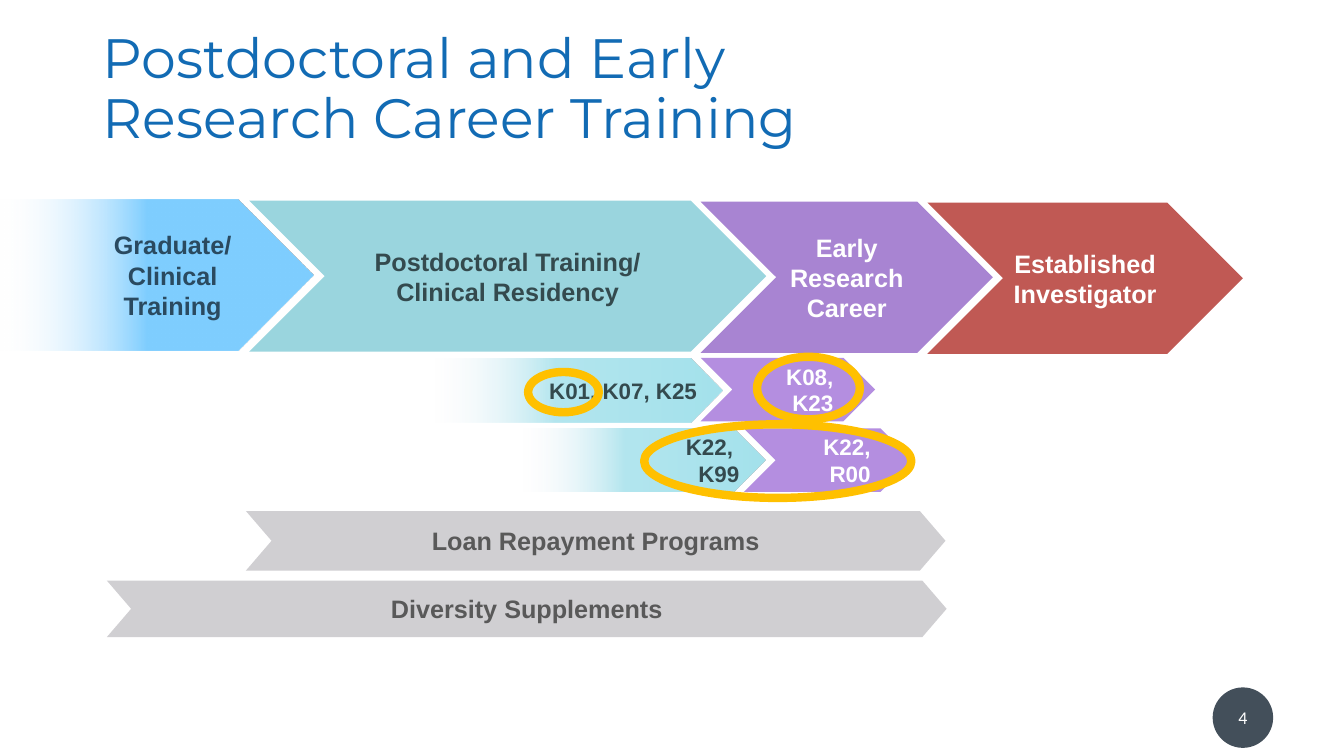
from lxml import etree
from pptx import Presentation
from pptx import util as u
from pptx.dml.color import RGBColor
from pptx.enum import shapes, text
from pptx.oxml.ns import qn

SLIDE_WIDTH, SLIDE_HEIGHT = u.Inches(13.33), u.Inches(7.5)
COLUMN, ROW = SLIDE_WIDTH / 100, SLIDE_HEIGHT / 100
CHEVRON = shapes.MSO_SHAPE.CHEVRON
PENTAGON = shapes.MSO_SHAPE.PENTAGON
OVAL = shapes.MSO_SHAPE.OVAL
CENTER, RIGHT = text.PP_ALIGN.CENTER, text.PP_ALIGN.RIGHT

COLORS = {
    "title": "126BB4", "white": "FFFFFF", "page": "434F5A",
    "graduate": "7FCEFF", "graduate_text": "2A4A60",
    "postdoc": "9AD5DE", "postdoc_text": "344A4E",
    "early": "A884D2", "early_award": "B48EE0", "established": "C05954",
    "program": "D0CFD2", "program_text": "595959",
    "award": "A4E2EC", "award_middle": "B3E6EF", "award_fade": "F6F8FC",
    "highlight": "FFC000",
}
STAGE = {"name": "Arial", "size": u.Pt(18), "bold": True}
AWARD = {"name": "Arial", "size": u.Pt(16), "bold": True}
PAGE = {"name": "Calibri", "size": u.Pt(12.8)}
TITLE = {"name": "Montserrat", "size": u.Pt(39.6), "bold": False}
GRADUATE_FADE = [(53, "graduate", 100), (100, "white", 0)]
AWARD_FADE = [(0, "award", 100), (58, "award_middle", 100), (100, "award_fade", 0)]

ARROWS = [
    (CHEVRON, (55.35, 56.67, 12.53, 8.4), "early_award", "K22, R00", AWARD, "white", RIGHT),
    (CHEVRON, (18.3, 67.6, 52.05, 7.87), "program", "Loan Repayment Programs", STAGE, "program_text", CENTER),
    (CHEVRON, (7.95, 76.8, 62.48, 7.47), "program", "Diversity Supplements", STAGE, "program_text", CENTER),
    (CHEVRON, (69, 26.8, 23.48, 20), "established", "Established Investigator", STAGE, "white", CENTER),
    (CHEVRON, (52.13, 26.67, 21.75, 20), "early", "Early Research Career", STAGE, "white", CENTER),
    (CHEVRON, (18.53, 26.53, 38.48, 20), "postdoc", "Postdoctoral Training/\vClinical Residency",
     STAGE, "postdoc_text", CENTER),
    (PENTAGON, (32.4, 47.47, 21.38, 8.4), AWARD_FADE, "K01, K07, K25", AWARD, "postdoc_text", RIGHT),
    (PENTAGON, (38.93, 56.67, 18, 8.4), AWARD_FADE, "K22, \nK99", AWARD, "postdoc_text", RIGHT),
    (PENTAGON, (0, 26.4, 23.33, 20), GRADUATE_FADE, "Graduate/\vClinical\vTraining",
     STAGE, "graduate_text", CENTER),
    (CHEVRON, (52.13, 47.33, 12.98, 8.4), "early_award", "K08, K23", AWARD, "white", RIGHT),
]
NOTCHES = {"Loan Repayment Programs": 0.43, "Diversity Supplements": 0.43}
INDENTS = {"Graduate/\vClinical\vTraining": u.Inches(0.69)}
HIGHLIGHTS = [
    (39.3, 49.2, 5.25, 5.33),
    (56.33, 47.2, 7.65, 8.27),
    (47.93, 56.13, 19.88, 9.73),
]


def set_all(target, values):
    for name, value in values.items():
        setattr(target, name, value)


def color(name):
    return RGBColor.from_string(COLORS[name])


def place(box):
    left, top, width, height = box
    return [u.Emu(round(n)) for n in (left * COLUMN, top * ROW, width * COLUMN, height * ROW)]


def fade(shape, stops):
    shape.fill.gradient()
    shape.fill.gradient_angle = 180
    stop_list = shape._element.spPr.find(qn("a:gradFill")).find(qn("a:gsLst"))
    for stop in list(stop_list):
        stop_list.remove(stop)
    for position, name, opacity in stops:
        stop = etree.SubElement(stop_list, qn("a:gs"), pos=str(position * 1000))
        tint = etree.SubElement(stop, qn("a:srgbClr"), val=COLORS[name])
        if opacity < 100:
            etree.SubElement(tint, qn("a:alpha"), val=str(opacity * 1000))


def write(shape, words, font, font_color, alignment):
    frame = shape.text_frame
    set_all(frame, {"text": words, "word_wrap": True,
                    "auto_size": text.MSO_AUTO_SIZE.NONE,
                    "vertical_anchor": text.MSO_ANCHOR.MIDDLE})
    for paragraph in frame.paragraphs:
        paragraph.alignment = alignment
        for run in paragraph.runs:
            set_all(run.font, font)
            run.font.color.rgb = color(font_color)


def add_filled(slide, kind, box, fill, words, font, font_color, alignment):
    shape = slide.shapes.add_shape(kind, *place(box))
    shape.shadow.inherit = False
    shape.line.fill.background()
    if isinstance(fill, str):
        shape.fill.solid()
        shape.fill.fore_color.rgb = color(fill)
    else:
        fade(shape, fill)
    write(shape, words, font, font_color, alignment)
    if words in NOTCHES:
        shape.adjustments[0] = NOTCHES[words]
    if words in INDENTS:
        properties = shape.text_frame.paragraphs[0]._p.get_or_add_pPr()
        set_margin = {"marL": INDENTS[words], "indent": 0}
        for name, value in set_margin.items():
            properties.set(name, str(int(value)))


def add_highlight(slide, box):
    ring = slide.shapes.add_shape(OVAL, *place(box))
    ring.shadow.inherit = False
    ring.fill.background()
    ring.line.color.rgb = color("highlight")
    ring.line.width = u.Pt(6)


def set_title(slide, box, words):
    title = slide.shapes.title
    set_all(title, dict(zip(("left", "top", "width", "height"), place(box))))
    write(title, words, TITLE, "title", text.PP_ALIGN.LEFT)
    title.text_frame.paragraphs[0].line_spacing = 0.9


def main():
    presentation = Presentation()
    set_all(presentation, {"slide_width": SLIDE_WIDTH, "slide_height": SLIDE_HEIGHT})
    slide = presentation.slides.add_slide(presentation.slide_layouts[5])
    set_title(slide, (6.9, 5.33, 86.25, 13.2), "Postdoctoral and Early \vResearch Career Training")
    add_filled(slide, OVAL, (90.23, 90.93, 4.5, 8), "page", "4", PAGE, "white", CENTER)
    for arrow in ARROWS:
        add_filled(slide, *arrow)
    for box in HIGHLIGHTS:
        add_highlight(slide, box)
    presentation.save("out.pptx")


if __name__ == "__main__":
    main()
